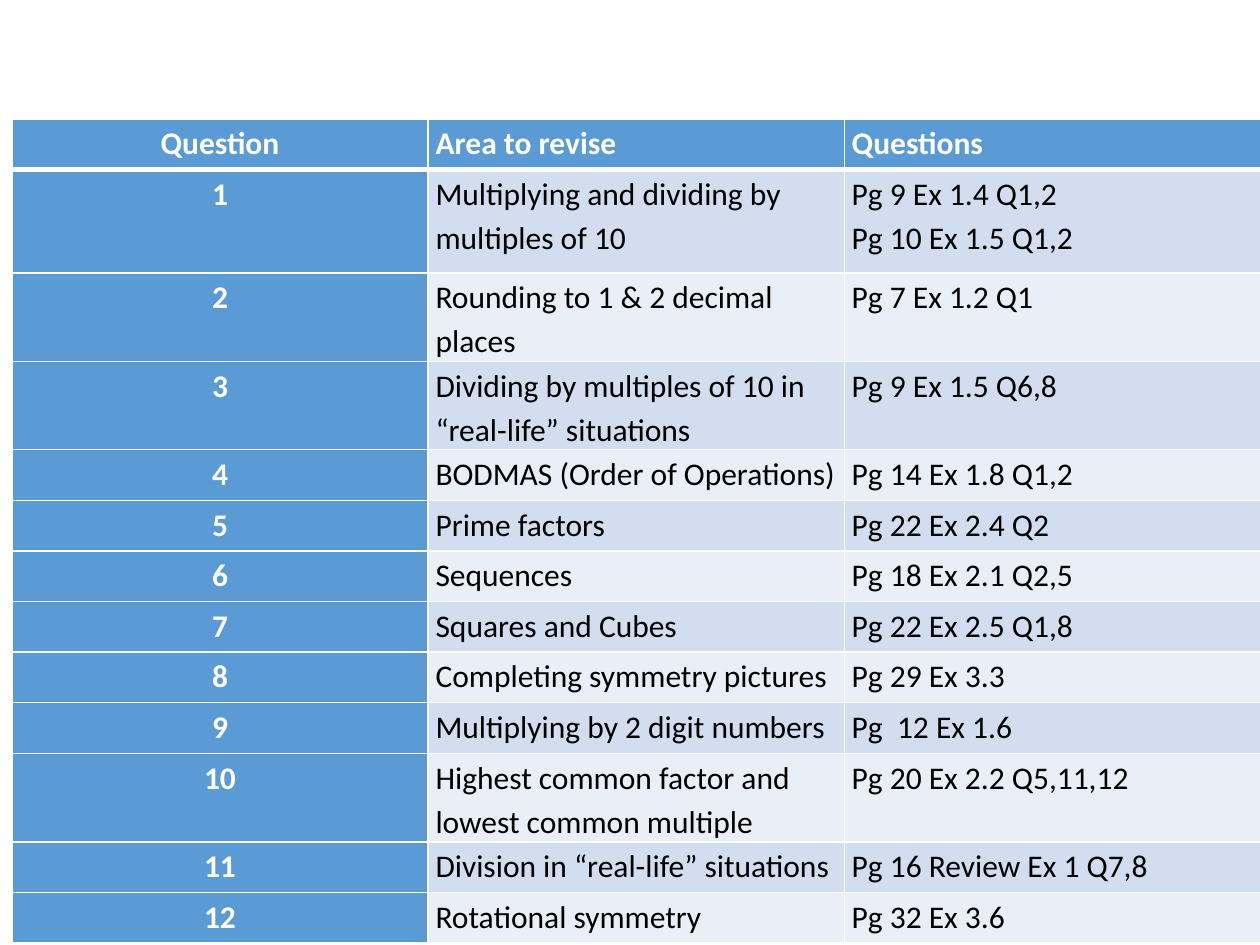
import pptx
import pptx.dml.color
import pptx.enum.text
import pptx.oxml.ns
import pptx.util
from lxml import etree

Cm = pptx.util.Cm
Pt = pptx.util.Pt
BLUE = pptx.dml.color.RGBColor(0x5B, 0x9B, 0xD5)
BAND_DARK = pptx.dml.color.RGBColor(0xD2, 0xDE, 0xEF)
BAND_LIGHT = pptx.dml.color.RGBColor(0xEA, 0xEF, 0xF7)
WHITE = pptx.dml.color.RGBColor(0xFF, 0xFF, 0xFF)
BLACK = pptx.dml.color.RGBColor(0x00, 0x00, 0x00)

SHORT_ROW, TWO_LINE_ROW, FIRST_ROW = 1.02, 1.7, 2.08
COLUMN_WIDTH = 8.39

REVISION = [
    ("Question", "Area to revise", "Questions", SHORT_ROW),
    ("1", "Multiplying and dividing by multiples of 10",
     "Pg 9 Ex 1.4 Q1,2\nPg 10 Ex 1.5 Q1,2", FIRST_ROW),
    ("2", "Rounding to 1 & 2 decimal places", "Pg 7 Ex 1.2 Q1", TWO_LINE_ROW),
    ("3", "Dividing by multiples of 10 in “real-life” situations",
     "Pg 9 Ex 1.5 Q6,8", TWO_LINE_ROW),
    ("4", "BODMAS (Order of Operations)", "Pg 14 Ex 1.8 Q1,2", SHORT_ROW),
    ("5", "Prime factors", "Pg 22 Ex 2.4 Q2", SHORT_ROW),
    ("6", "Sequences", "Pg 18 Ex 2.1 Q2,5", SHORT_ROW),
    ("7", "Squares and Cubes", "Pg 22 Ex 2.5 Q1,8", SHORT_ROW),
    ("8", "Completing symmetry pictures", "Pg 29 Ex 3.3", SHORT_ROW),
    ("9", "Multiplying by 2 digit numbers", "Pg  12 Ex 1.6", SHORT_ROW),
    ("10", "Highest common factor and lowest common multiple",
     "Pg 20 Ex 2.2 Q5,11,12", TWO_LINE_ROW),
    ("11", "Division in “real-life” situations", "Pg 16 Review Ex 1 Q7,8", SHORT_ROW),
    ("12", "Rotational symmetry", "Pg 32 Ex 3.6", SHORT_ROW),
]


def add_border(cell, side, width):
    qn = pptx.oxml.ns.qn
    line = etree.SubElement(cell._tc.get_or_add_tcPr(), qn("a:ln" + side), w=str(Pt(width)))
    fill = etree.SubElement(line, qn("a:solidFill"))
    etree.SubElement(fill, qn("a:srgbClr"), val=str(WHITE))


presentation = pptx.Presentation()
presentation.slide_width = Cm(25.4)
presentation.slide_height = Cm(19.05)
slide = presentation.slides.add_slide(presentation.slide_layouts[6])

revision_table = slide.shapes.add_table(
    len(REVISION), 3, Cm(0.24), Cm(2.4), Cm(3 * COLUMN_WIDTH),
    Cm(sum(entry[-1] for entry in REVISION))).table
for column in revision_table.columns:
    column.width = Cm(COLUMN_WIDTH)

for row_index, (*texts, height) in enumerate(REVISION):
    revision_table.rows[row_index].height = Cm(height)
    band = BAND_DARK if row_index % 2 else BAND_LIGHT
    for column_index, text in enumerate(texts):
        cell = revision_table.cell(row_index, column_index)
        heading = row_index == 0 or column_index == 0
        cell.margin_left = cell.margin_right = Cm(0.15)
        cell.margin_top = cell.margin_bottom = 0
        for side in "LRTB":
            under_header = (row_index, side) in ((0, "B"), (1, "T"))
            add_border(cell, side, 3 if under_header else 1)
        cell.fill.solid()
        cell.fill.fore_color.rgb = BLUE if heading else band
        cell.text_frame.text = text
        for paragraph in cell.text_frame.paragraphs:
            paragraph.line_spacing = 1.15
            paragraph.alignment = (pptx.enum.text.PP_ALIGN.LEFT if column_index
                                   else pptx.enum.text.PP_ALIGN.CENTER)
            for run in paragraph.runs:
                run.font.name = "Calibri"
                run.font.size = Pt(18)
                run.font.bold = heading
                run.font.color.rgb = WHITE if heading else BLACK

presentation.save("out.pptx")
